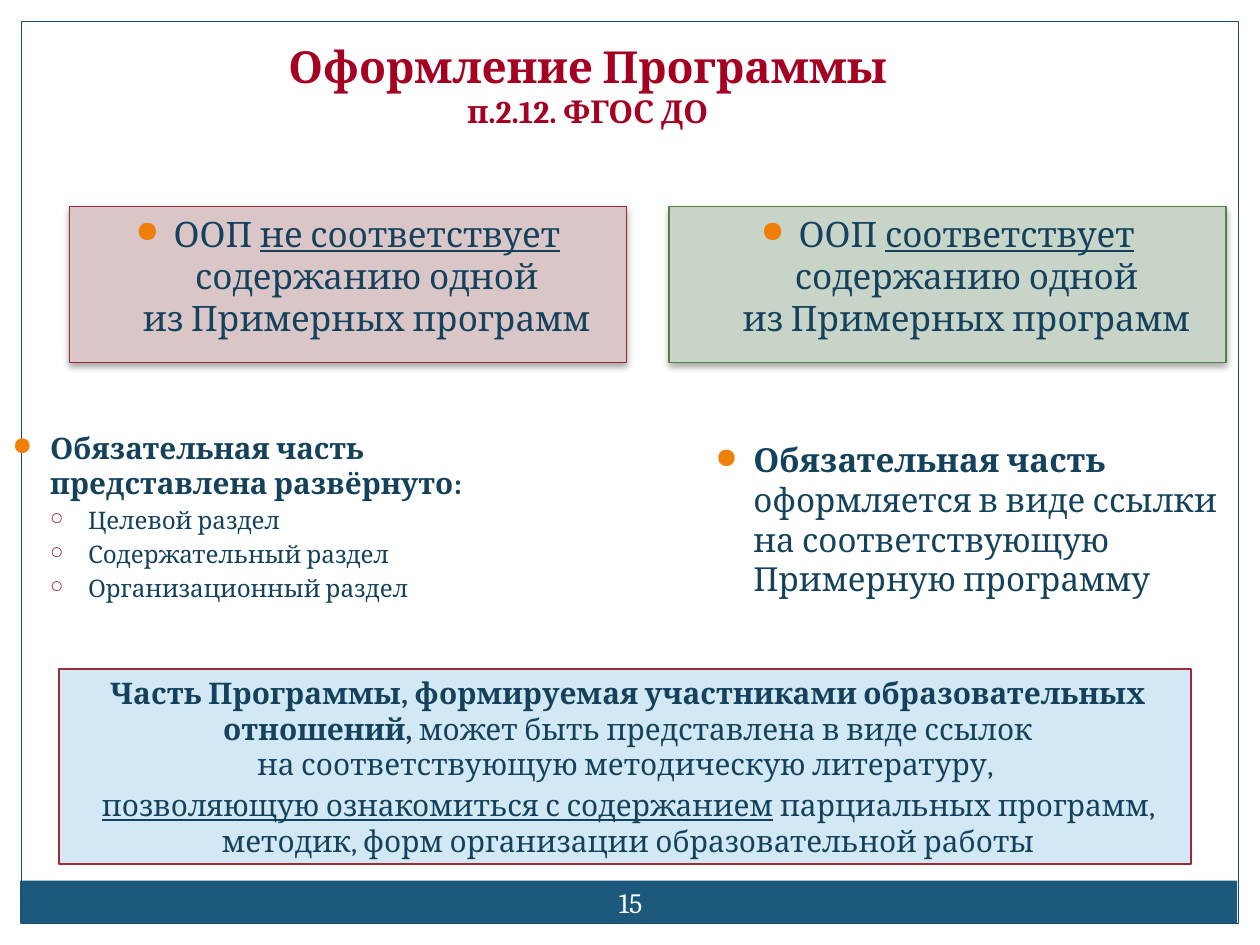
from copy import deepcopy
from lxml.etree import SubElement
from pptx import Presentation
from pptx.dml.color import RGBColor
from pptx.enum.shapes import MSO_SHAPE
from pptx.enum.text import MSO_ANCHOR, PP_ALIGN
from pptx.oxml import parse_xml
from pptx.oxml.ns import nsdecls, qn
from pptx.util import Inches, Pt

WHITE = RGBColor(0xFF, 0xFF, 0xFF)
NAVY = RGBColor(0x1B, 0x58, 0x7C)
FRAME = RGBColor(0x18, 0x4E, 0x6D)
INK = RGBColor(0x14, 0x42, 0x5D)
CRIMSON = RGBColor(0xA5, 0x00, 0x21)
ORANGE = RGBColor(0xF0, 0x7F, 0x09)
RED = RGBColor(0x9F, 0x29, 0x36)
GREEN = RGBColor(0x4E, 0x85, 0x42)
PINK = RGBColor(0xDB, 0xC6, 0xC7)
SAGE = RGBColor(0xC9, 0xD4, 0xC8)
SKY = RGBColor(0x4E, 0xA5, 0xD8)
LEFT, CENTER = PP_ALIGN.LEFT, PP_ALIGN.CENTER

deck = Presentation()
deck.slide_width, deck.slide_height = Inches(10), Inches(7.5)
page = deck.slides.add_slide(deck.slide_layouts[6])


def add_box(place, fill=None, line=None, weight=0.75, anchor=MSO_ANCHOR.TOP):
    area = [Inches(length) for length in place]
    if fill is None and line is None:
        box = page.shapes.add_textbox(*area)
    else:
        box = page.shapes.add_shape(MSO_SHAPE.RECTANGLE, *area)
        box.shadow.inherit = False
        if fill is None:
            box.fill.background()
        else:
            box.fill.solid()
            box.fill.fore_color.rgb = fill
        if line is None:
            box.line.fill.background()
        else:
            box.line.color.rgb = line
            box.line.width = Pt(weight)
    box.text_frame.word_wrap = True
    box.text_frame.vertical_anchor = anchor
    return box


def add_para(box, spans, align=LEFT, before=0, margin=0, bullet=None, color=INK):
    frame = box.text_frame
    para = frame.paragraphs[0]
    if para.runs:
        para = frame.add_paragraph()
    para.alignment = align
    para.space_before = Pt(before)
    properties = para._p.get_or_add_pPr()
    properties.set("marL", str(Inches(margin)))
    if bullet:
        mark, mark_color, percent = bullet
        properties.set("indent", str(Inches(-0.3)))
        tint = SubElement(properties, qn("a:buClr"))
        SubElement(tint, qn("a:srgbClr"), val=str(mark_color))
        SubElement(properties, qn("a:buSzPct"), val=str(percent * 1000))
        SubElement(properties, qn("a:buChar"), char=mark)
    for text, size, bold, underline in spans:
        for number, piece in enumerate(text.split("\n")):
            if number:
                para.add_line_break()
                para._p.findall(qn("a:br"))[-1].append(deepcopy(span._r.rPr))
            if piece:
                span = para.add_run()
                span.text = piece
                span.font.name = "Cambria"
                span.font.size = Pt(size)
                span.font.bold = bold
                span.font.underline = underline
                span.font.color.rgb = color


DISC = ("●", ORANGE, 85)
RING = ("○", RED, 70)

for edge in [(0, 0, 10, 0.17), (9.83, 0, 0.17, 7.5), (0, 0, 0.17, 7.5)]:
    add_box(edge, WHITE)
add_box((0.16, 6.99, 9.66, 0.34), NAVY)
add_box((0.17, 0.17, 9.66, 7.16), line=FRAME)

number_box = add_box((4.67, 6.92, 0.67, 0.48), anchor=MSO_ANCHOR.MIDDLE)
number_box.text_frame.margin_left = number_box.text_frame.margin_right = Inches(0.05)
add_para(number_box, [("15", 16, False, False)], CENTER, color=WHITE)

detailed = add_box((0, 2.7, 4.42, 1.91))
detailed.text_frame.margin_top = Inches(0.71)
add_para(detailed, [("Обязательная часть представлена развёрнуто:", 16.9, True, False)],
         margin=0.3, bullet=DISC)
for section in ["Целевой раздел", "Содержательный раздел", "Организационный раздел"]:
    add_para(detailed, [(section, 13.8, False, False)], before=2.8, margin=0.6, bullet=RING)

linked = add_box((5.58, 2.7, 4.42, 1.91))
linked.text_frame.margin_top = Inches(0.79)
add_para(linked, [
    ("Обязательная часть ", 18.9, True, False),
    ("оформляется в виде ссылки на соответствующую Примерную программу", 18.9, False, False),
], margin=0.3, bullet=DISC)

title = add_box((0, 0.25, 9.33, 0.83), anchor=MSO_ANCHOR.BOTTOM)
add_para(title, [("Оформление Программы\n", 25.2, True, False),
                 ("п.2.12. ФГОС ДО", 18, True, False)], CENTER, color=CRIMSON)

for left, fill, line, verdict in [
    (0.55, PINK, RED, "не соответствует "),
    (5.31, SAGE, GREEN, "соответствует\n"),
]:
    card = add_box((left, 1.64, 4.42, 1.24), fill, line)
    effects = card._element.spPr.find(qn("a:effectLst"))
    effects.append(parse_xml(
        f'<a:outerShdw {nsdecls("a")} blurRad="{Pt(4)}" dist="{Pt(2)}" dir="5400000" '
        'rotWithShape="0"><a:srgbClr val="000000"><a:alpha val="35000"/></a:srgbClr>'
        '</a:outerShdw>'))
    add_para(card, [
        ("ООП ", 20, False, False),
        (verdict, 20, False, True),
        ("содержанию одной\nиз Примерных программ", 20, False, False),
    ], CENTER, before=4, margin=0.3, bullet=DISC)

summary = add_box((0.47, 5.31, 8.98, 1.55), SKY, RED, 1, MSO_ANCHOR.MIDDLE)
sky = summary._element.spPr.find(qn("a:solidFill")).find(qn("a:srgbClr"))
SubElement(sky, qn("a:alpha"), val="25000")
add_para(summary, [
    ("Часть Программы, формируемая участниками образовательных отношений, ", 17, True, False),
    ("может быть представлена в виде ссылок\nна соответствующую методическую литературу, ",
     17, False, False),
], CENTER, before=3, margin=0.05)
add_para(summary, [
    ("позволяющую ознакомиться с содержанием", 17, False, True),
    (" парциальных программ, методик, форм организации образовательной работы",
     17, False, False),
], CENTER, before=3, margin=0.05)

deck.save("out.pptx")
